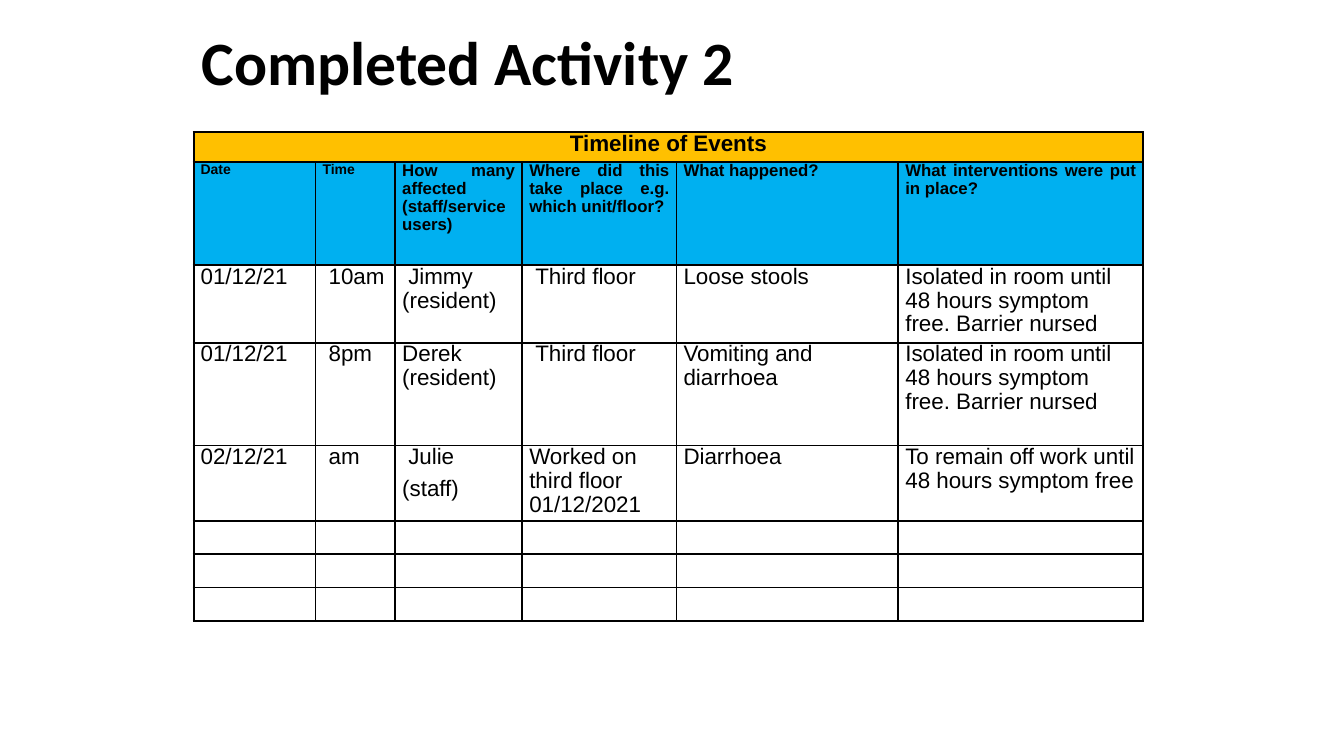
from dataclasses import dataclass
from typing import Optional

from lxml.etree import SubElement
from pptx import Presentation
from pptx.dml.color import RGBColor
from pptx.enum.text import MSO_ANCHOR, PP_ALIGN
from pptx.oxml.ns import qn
from pptx.util import Inches, Pt

BLACK = RGBColor(0x00, 0x00, 0x00)
AMBER = RGBColor(0xFF, 0xC0, 0x00)
SKY = RGBColor(0x00, 0xB0, 0xF0)

COLUMN_WIDTHS = (1.21, 0.79, 1.26, 1.53, 2.2, 2.43)
ROW_HEIGHTS = (0.3, 1.02, 0.77, 1.02, 0.75, 0.33, 0.33, 0.33)
FIRST_LINE_INDENT = Inches(0.06)


@dataclass(frozen=True)
class Entry:
    text: str
    size: int = 16
    bold: bool = False
    align: PP_ALIGN = PP_ALIGN.LEFT
    indented: bool = False
    fill: Optional[RGBColor] = None


def heading(text: str, size: int = 12) -> Entry:
    return Entry(text, size, bold=True, align=PP_ALIGN.JUSTIFY, fill=SKY)


def indented(text: str) -> Entry:
    return Entry(text, indented=True)


ISOLATED = Entry("Isolated in room until 48 hours symptom free. Barrier nursed")
BANNER = Entry("Timeline of Events", bold=True, align=PP_ALIGN.CENTER, fill=AMBER)
EMPTY = Entry("")

TIMELINE = [
    [BANNER] + [EMPTY] * 5,
    [
        heading("Date", 10),
        heading("Time", 10),
        heading("How many affected (staff/service users)"),
        heading("Where did this take place e.g. which unit/floor?"),
        heading("What happened?"),
        heading("What interventions were put in place?"),
    ],
    [
        Entry("01/12/21"),
        indented("10am"),
        indented("Jimmy (resident)"),
        indented("Third floor"),
        Entry("Loose stools"),
        ISOLATED,
    ],
    [
        Entry("01/12/21"),
        indented("8pm"),
        Entry("Derek (resident)"),
        indented("Third floor"),
        Entry("Vomiting and diarrhoea"),
        ISOLATED,
    ],
    [
        Entry("02/12/21"),
        indented("am"),
        indented("Julie\n(staff)"),
        Entry("Worked on third floor 01/12/2021"),
        Entry("Diarrhoea"),
        Entry("To remain off work until 48 hours symptom free"),
    ],
] + [[EMPTY] * 6] * 3


def add_borders(cell) -> None:
    properties = cell._tc.get_or_add_tcPr()
    for edge in ("a:lnL", "a:lnR", "a:lnT", "a:lnB"):
        line = SubElement(properties, qn(edge), w=str(Pt(1.5)))
        solid = SubElement(line, qn("a:solidFill"))
        SubElement(solid, qn("a:srgbClr"), val=str(BLACK))


def format_cell(cell, entry: Entry) -> None:
    cell.margin_left = cell.margin_right = Inches(0.07)
    cell.margin_top = cell.margin_bottom = 0
    add_borders(cell)
    if entry.fill is None:
        cell.fill.background()
    else:
        cell.fill.solid()
        cell.fill.fore_color.rgb = entry.fill
    if not entry.text:
        return
    cell.text_frame.text = entry.text
    for index, paragraph in enumerate(cell.text_frame.paragraphs):
        if entry.indented and index == 0:
            paragraph._p.get_or_add_pPr().set("indent", str(FIRST_LINE_INDENT))
        paragraph.alignment = entry.align
        paragraph.line_spacing = 0.96
        paragraph.space_after = Pt(6)
        font = paragraph.font
        font.name, font.size, font.bold = "Arial", Pt(entry.size), entry.bold
        font.color.rgb = BLACK


def add_title(slide) -> None:
    title = slide.shapes.title
    title.left, title.top = Inches(1.9), Inches(0.13)
    title.width, title.height = Inches(9.39), Inches(1.04)
    title.text_frame.text = "Completed Activity 2"
    title.text_frame.vertical_anchor = MSO_ANCHOR.MIDDLE
    paragraph = title.text_frame.paragraphs[0]
    paragraph.alignment = PP_ALIGN.LEFT
    paragraph.line_spacing = 0.9
    font = paragraph.font
    font.name, font.size, font.bold = "Calibri", Pt(44), True
    font.color.rgb = BLACK


def add_timeline(slide) -> None:
    table = slide.shapes.add_table(
        len(ROW_HEIGHTS), len(COLUMN_WIDTHS), Inches(1.92), Inches(1.31),
        Inches(sum(COLUMN_WIDTHS)), Inches(sum(ROW_HEIGHTS)),
    ).table
    table.first_row = table.horz_banding = False
    for column, width in zip(table.columns, COLUMN_WIDTHS):
        column.width = Inches(width)
    for row, height, entries in zip(table.rows, ROW_HEIGHTS, TIMELINE):
        row.height = Inches(height)
        for cell, entry in zip(row.cells, entries):
            format_cell(cell, entry)
    table.cell(0, 0).merge(table.cell(0, len(COLUMN_WIDTHS) - 1))


def main() -> None:
    presentation = Presentation()
    presentation.slide_width = Inches(13.33)
    presentation.slide_height = Inches(7.5)
    slide = presentation.slides.add_slide(presentation.slide_layouts[5])
    add_title(slide)
    add_timeline(slide)
    presentation.save("out.pptx")


if __name__ == "__main__":
    main()
